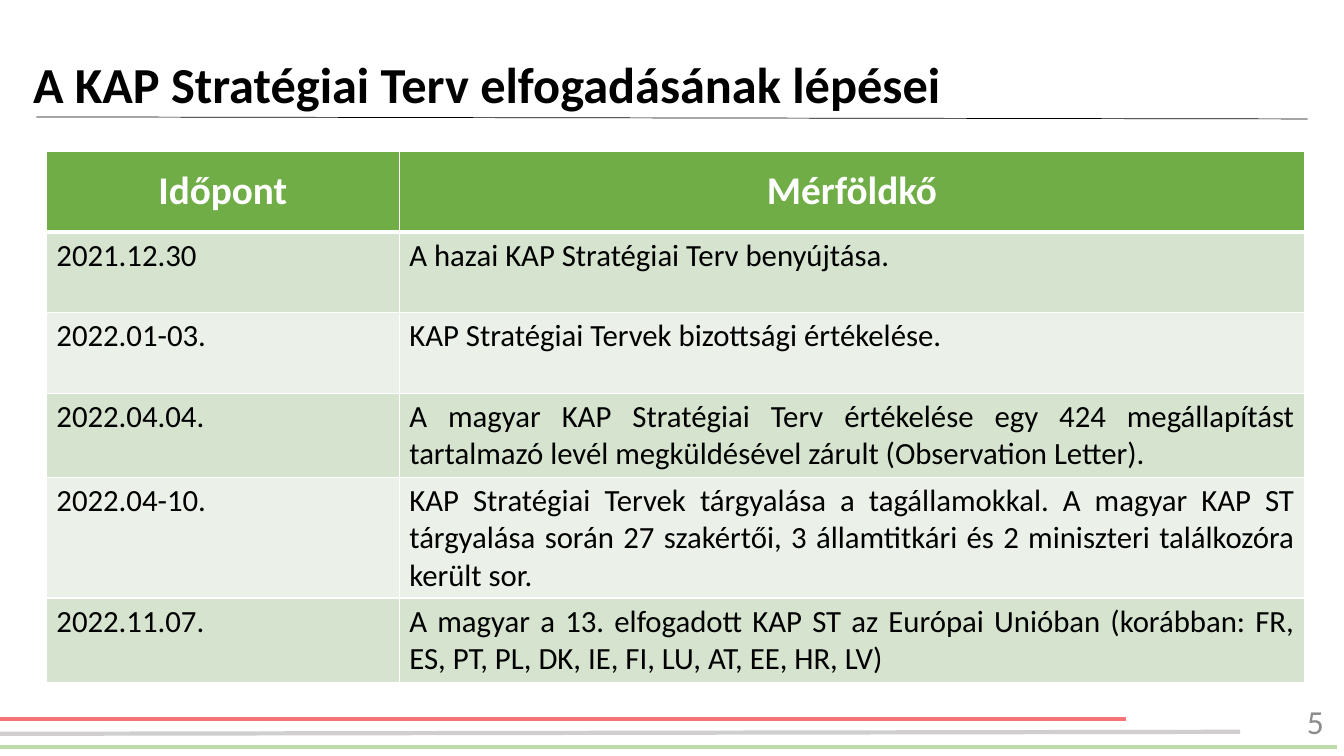
from lxml import etree
from pptx import Presentation, util as u
from pptx.dml.color import RGBColor
from pptx.enum import shapes, text
from pptx.oxml import ns

EMU_PER_PX = 9144  # 100 px to the inch
COLORS = {
    "black": "000000", "white": "FFFFFF", "grey": "8C8C8C",
    "red_line": "F97376", "grey_line": "D0CECE", "green_line": "BEDCAA",
    "header": "70AD47", "odd_row": "D5E3CF", "even_row": "EBF1E9",
}
MILESTONES = [
    ("Időpont", "Mérföldkő"),
    ("2021.12.30", "A hazai KAP Stratégiai Terv benyújtása."),
    ("2022.01-03.", "KAP Stratégiai Tervek bizottsági értékelése."),
    ("2022.04.04.", "A magyar KAP Stratégiai Terv értékelése egy 424 megállapítást "
                    "tartalmazó levél megküldésével zárult (Observation Letter)."),
    ("2022.04-10.", "KAP Stratégiai Tervek tárgyalása a tagállamokkal. A magyar KAP ST "
                    "tárgyalása során 27 szakértői, 3 államtitkári és 2 miniszteri "
                    "találkozóra került sor."),
    ("2022.11.07.", "A magyar a 13. elfogadott KAP ST az Európai Unióban (korábban: FR, "
                    "ES, PT, PL, DK, IE, FI, LU, AT, EE, HR, LV)"),
]
ALIGN = text.PP_ALIGN


def px(n):
    return u.Emu(n * EMU_PER_PX)


def rgb(name):
    return RGBColor.from_string(COLORS[name])


class SlideBuilder:
    font = "Calibri"

    def __init__(self, slide):
        self.slide = slide

    def set_words(self, frame, words, size, color, bold=False, align=ALIGN.LEFT):
        frame.text = words
        paragraph = frame.paragraphs[0]
        paragraph.alignment = align
        font = paragraph.runs[0].font
        font.name, font.size, font.bold = self.font, u.Pt(size), bold
        font.color.rgb = rgb(color)
        return paragraph

    def line(self, x1, y1, x2, y2, color, width):
        rule = self.slide.shapes.add_connector(
            shapes.MSO_CONNECTOR.STRAIGHT, px(x1), px(y1), px(x2), px(y2))
        rule.line.color.rgb = rgb(color)
        rule.line.width = u.Pt(width)
        etree.SubElement(rule._element.spPr, ns.qn("a:effectLst"))

    def label(self, x, y, w, h, words, size, color, **style):
        frame = self.slide.shapes.add_textbox(px(x), px(y), px(w), px(h)).text_frame
        frame.word_wrap = True
        frame.vertical_anchor = text.MSO_ANCHOR.MIDDLE
        return self.set_words(frame, words, size, color, **style)

    def borders(self, cell, top, bottom):
        props = cell._tc.get_or_add_tcPr()
        for side, width in (("L", 1), ("R", 1), ("T", top), ("B", bottom)):
            edge = etree.SubElement(props, ns.qn(f"a:ln{side}"), w=str(u.Pt(width)))
            fill = etree.SubElement(edge, ns.qn("a:solidFill"))
            etree.SubElement(fill, ns.qn("a:srgbClr"), val=COLORS["white"])

    def table(self, x, y, h, widths, row_height, rows):
        holder = self.slide.shapes.add_table(
            len(rows), len(widths), px(x), px(y), px(sum(widths)), px(h))
        grid = holder.table
        for column, width in zip(grid.columns, widths):
            column.width = px(width)
        for i, row in enumerate(rows):
            grid.rows[i].height = px(row_height)
            for j, words in enumerate(row):
                cell = grid.cell(i, j)
                self.borders(cell, 3 if i == 1 else 1, 3 if i == 0 else 1)
                cell.fill.solid()
                if i == 0:
                    cell.fill.fore_color.rgb = rgb("header")
                    cell.vertical_anchor = text.MSO_ANCHOR.MIDDLE
                    self.set_words(cell.text_frame, words, 28, "white", True, ALIGN.CENTER)
                else:
                    cell.fill.fore_color.rgb = rgb("odd_row" if i % 2 else "even_row")
                    align = ALIGN.JUSTIFY if j == 1 and i > 2 else ALIGN.LEFT
                    self.set_words(cell.text_frame, words, 22, "black", align=align)
        grid.cell(1, 0).text_frame.paragraphs[0].space_after = u.Pt(6)
        holder.height = px(h)


def main():
    deck = Presentation()
    deck.slide_width, deck.slide_height = px(1333), px(750)
    page = SlideBuilder(deck.slides.add_slide(deck.slide_layouts[6]))

    # Footer stripes and title rule
    page.line(0, 713, 1117, 713, "red_line", 3)
    page.line(0, 741, 1326, 741, "green_line", 3)
    page.line(0, 728, 1230, 726, "grey_line", 3)
    page.line(36, 116, 1297, 118, "black", 0.5)

    # Title and page number
    title = page.label(23, 14, 1150, 145, "A KAP Stratégiai Terv elfogadásának lépései",
                       36, "black", bold=True)
    title.line_spacing = 0.9
    page.label(1023, 695, 300, 40, "5", 24, "grey", align=ALIGN.RIGHT)

    # Milestones
    page.table(46, 150, 527, (350, 898), 80, MILESTONES)

    deck.save("out.pptx")


if __name__ == "__main__":
    main()
